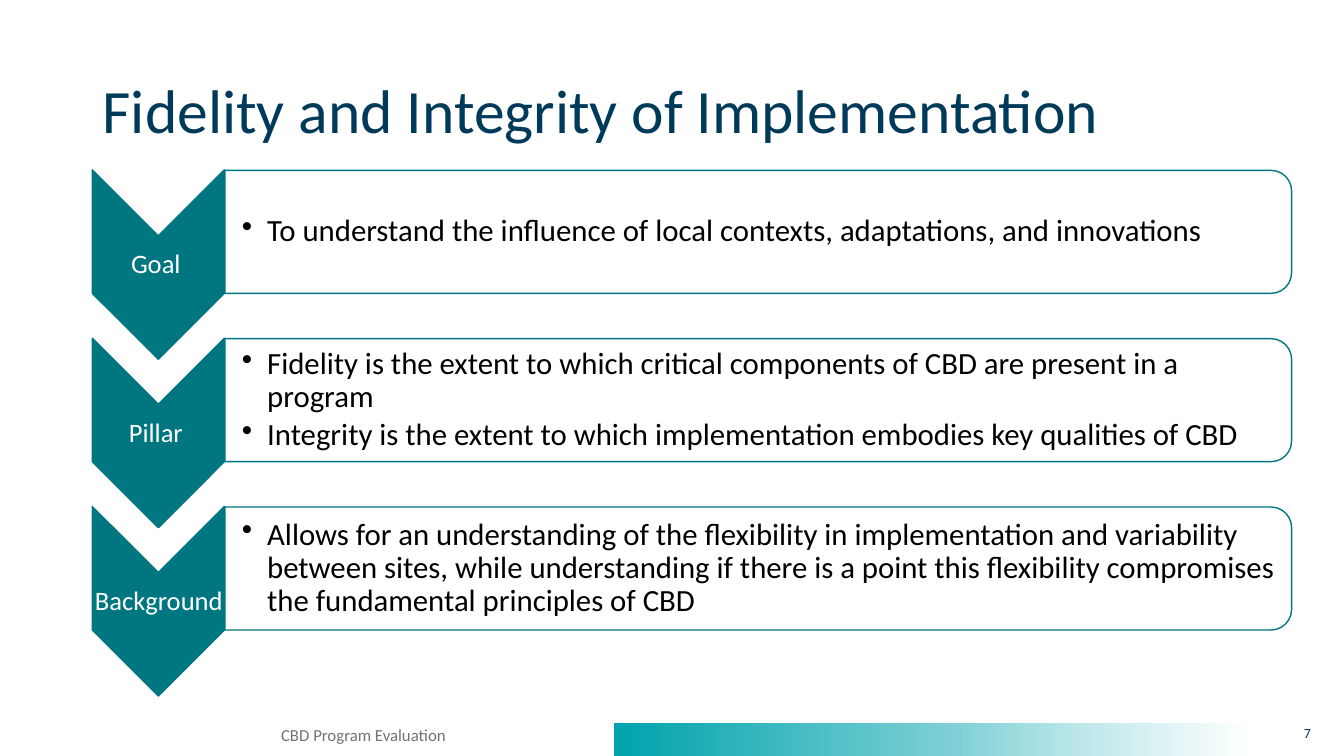
"""Build the slide on fidelity and integrity of implementation."""
from dataclasses import dataclass

from lxml import etree
from pptx import Presentation
from pptx.dml.color import RGBColor
from pptx.enum.shapes import MSO_SHAPE
from pptx.enum.text import MSO_ANCHOR, PP_ALIGN
from pptx.oxml.ns import qn
from pptx.util import Inches, Pt

CHEVRON = MSO_SHAPE.CHEVRON
RECTANGLE = MSO_SHAPE.RECTANGLE
ROUNDED_PANEL = MSO_SHAPE.ROUND_2_SAME_RECTANGLE
TOP, MIDDLE = MSO_ANCHOR.TOP, MSO_ANCHOR.MIDDLE
LEFT, CENTER, RIGHT = PP_ALIGN.LEFT, PP_ALIGN.CENTER, PP_ALIGN.RIGHT

FONT = "Calibri"
TEAL, NAVY, WHITE, BLACK, GRAY = "007680", "003A5B", "FFFFFF", "000000", "767171"
ROW_PITCH = 1.67
BAND_STOPS = ((0, "00A3AD"), (54, "80D1D6"), (74, "C0E8EB"), (100, WHITE))


@dataclass(frozen=True)
class Box:
    left: float
    top: float
    width: float
    height: float

    def lowered(self, distance: float):
        return Box(self.left, self.top + distance, self.width, self.height)

    def lengths(self) -> list:
        return [Inches(v) for v in (self.left, self.top, self.width, self.height)]


@dataclass(frozen=True)
class TextStyle:
    size: float
    color: str
    align: PP_ALIGN = LEFT
    anchor: MSO_ANCHOR = TOP
    margins: tuple = (0.1, 0.05, 0.1, 0.05)
    line_spacing: float = 1.0
    space_after: float = 0
    bulleted: bool = False


@dataclass(frozen=True)
class Row:
    label: str
    points: tuple


TITLE = TextStyle(44, NAVY, anchor=MIDDLE, line_spacing=0.9)
LABEL = TextStyle(19, WHITE, CENTER, MIDDLE, (0.01,) * 4, 0.9, 6.65)
POINTS = TextStyle(22, BLACK, LEFT, MIDDLE, (0.17, 0.02, 0.02, 0.02), 0.9, 3.3, True)
FOOTER = TextStyle(12, GRAY, CENTER)
PAGE_NUMBER = TextStyle(10, NAVY, RIGHT)

CHEVRON_BOX = Box(0.63, 1.97, 1.88, 1.31)
LABEL_BOX = Box(0.92, 2.35, 1.31, 0.56)
PANEL_BOX = Box(6.91, -2.99, 1.22, 10.58)
POINTS_BOX = Box(2.23, 1.75, 10.52, 1.1)

ROWS = (
    Row("Goal ", (
        "To understand the influence of local contexts, adaptations, and innovations",
    )),
    Row("Pillar ", (
        "Fidelity is the extent to which critical components of CBD are present in a program",
        "Integrity is the extent to which implementation embodies key qualities of CBD",
    )),
    Row("Background", (
        "Allows for an understanding of the flexibility in implementation and variability "
        "between sites, while understanding if there is a point this flexibility "
        "compromises the fundamental principles of CBD",
    )),
)


def rgb(color: str) -> RGBColor:
    return RGBColor.from_string(color)


def add_bullet(paragraph) -> None:
    properties = paragraph._p.get_or_add_pPr()
    properties.set("marL", str(Inches(0.25)))
    properties.set("indent", str(Inches(-0.25)))
    etree.SubElement(properties, qn("a:buChar"), char="•")


def add_text(slide, box: Box, texts: tuple, style: TextStyle) -> None:
    frame = slide.shapes.add_textbox(*box.lengths()).text_frame
    frame.word_wrap = True
    frame.vertical_anchor = style.anchor
    (frame.margin_left, frame.margin_top,
     frame.margin_right, frame.margin_bottom) = map(Inches, style.margins)
    for index, text in enumerate(texts):
        paragraph = frame.add_paragraph() if index else frame.paragraphs[0]
        paragraph.text = text
        if style.bulleted:
            add_bullet(paragraph)
        paragraph.alignment = style.align
        paragraph.line_spacing = style.line_spacing
        paragraph.space_after = Pt(style.space_after)
        paragraph.font.name = FONT
        paragraph.font.size = Pt(style.size)
        paragraph.font.color.rgb = rgb(style.color)


def add_turned_shape(slide, kind: MSO_SHAPE, box: Box, fill: str):
    shape = slide.shapes.add_shape(kind, *box.lengths())
    shape.rotation = 90
    shape.shadow.inherit = False
    shape.fill.solid()
    shape.fill.fore_color.rgb = rgb(fill)
    shape.line.color.rgb = rgb(TEAL)
    shape.line.width = Pt(1)
    return shape


def set_opacity(shape, percent: int) -> None:
    color = shape._element.spPr.find(qn("a:solidFill")).find(qn("a:srgbClr"))
    etree.SubElement(color, qn("a:alpha"), val=str(percent * 1000))


def add_gradient_band(slide, box: Box) -> None:
    shape = slide.shapes.add_shape(RECTANGLE, *box.lengths())
    shape.shadow.inherit = False
    shape.line.fill.background()
    shape.fill.gradient()
    shape.fill.gradient_angle = 0
    stops = shape._element.spPr.find(qn("a:gradFill")).find(qn("a:gsLst"))
    for stop in list(stops):
        stops.remove(stop)
    for position, color in BAND_STOPS:
        stop = etree.SubElement(stops, qn("a:gs"), pos=str(position * 1000))
        etree.SubElement(stop, qn("a:srgbClr"), val=color)


def add_row(slide, row: Row, offset: float) -> None:
    add_turned_shape(slide, CHEVRON, CHEVRON_BOX.lowered(offset), TEAL)
    add_text(slide, LABEL_BOX.lowered(offset), (row.label,), LABEL)
    panel = add_turned_shape(slide, ROUNDED_PANEL, PANEL_BOX.lowered(offset), WHITE)
    set_opacity(panel, 90)
    add_text(slide, POINTS_BOX.lowered(offset), row.points, POINTS)


def main() -> None:
    presentation = Presentation()
    presentation.slide_width = Inches(13.33)
    presentation.slide_height = Inches(7.5)
    slide = presentation.slides.add_slide(presentation.slide_layouts[6])
    add_gradient_band(slide, Box(6.09, 7.17, 6.33, 0.33))
    add_text(slide, Box(0.92, 0.4, 11.5, 1.45),
             ("Fidelity and Integrity of Implementation",), TITLE)
    for index, row in enumerate(ROWS):
        add_row(slide, row, index * ROW_PITCH)
    add_text(slide, Box(1.41, 7.14, 4.43, 0.35), ("CBD Program Evaluation ",), FOOTER)
    add_text(slide, Box(12.42, 7.14, 0.68, 0.35), ("7",), PAGE_NUMBER)
    presentation.save("out.pptx")


if __name__ == "__main__":
    main()
